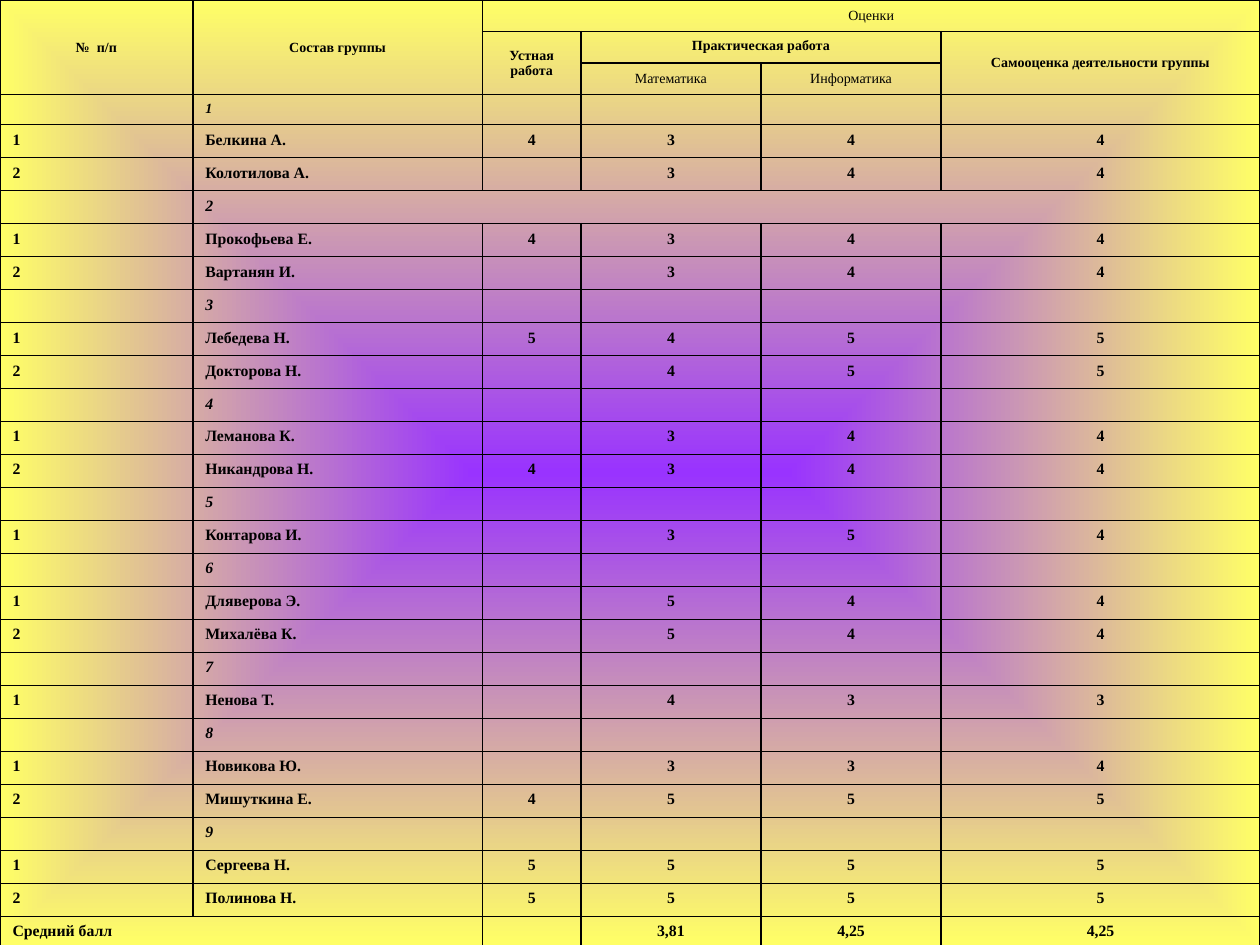
import pptx
import pptx.dml.color
import pptx.enum.text
import pptx.oxml
import pptx.oxml.ns
import pptx.util
from lxml import etree

Inches, Pt = pptx.util.Inches, pptx.util.Pt
ALIGN = pptx.enum.text.PP_ALIGN
ANCHOR = pptx.enum.text.MSO_ANCHOR

COLORS = {"center": "9933FF", "edge": "FFFF66", "ink": "000000"}
FONT = "Times New Roman"
COL_WIDTHS = [1.53, 2.3, 0.78, 1.43, 1.43, 2.53]
HEADER_HEIGHTS = [0.25, 0.25, 0.25, 0.24]  # the last one is the first group's row
TABLE_HEIGHT = 7.54

# row, column, rows spanned, columns spanned, text, bold, anchor
HEADERS = [
    (0, 0, 3, 1, "№  п/п", True, ANCHOR.MIDDLE),
    (0, 1, 3, 1, "Состав группы", True, ANCHOR.MIDDLE),
    (0, 2, 1, 4, "Оценки", False, ANCHOR.MIDDLE),
    (1, 2, 2, 1, "Устная работа", True, ANCHOR.MIDDLE),
    (1, 3, 1, 2, "Практическая работа", True, ANCHOR.TOP),
    (1, 5, 2, 1, "Самооценка деятельности группы", True, ANCHOR.MIDDLE),
    (2, 3, 1, 1, "Математика", False, ANCHOR.MIDDLE),
    (2, 4, 1, 1, "Информатика", False, ANCHOR.MIDDLE),
]
# Members of each group: name, oral work, mathematics, informatics, self-assessment
GROUPS = [
    [("Белкина А.", "4", "3", "4", "4"), ("Колотилова А.", "", "3", "4", "4")],
    [("Прокофьева Е.", "4", "3", "4", "4"), ("Вартанян И.", "", "3", "4", "4")],
    [("Лебедева Н.", "5", "4", "5", "5"), ("Докторова Н.", "", "4", "5", "5")],
    [("Леманова К.", "", "3", "4", "4"), ("Никандрова Н.", "4", "3", "4", "4")],
    [("Контарова И.", "", "3", "5", "4")],
    [("Дляверова Э.", "", "5", "4", "4"), ("Михалёва К.", "", "5", "4", "4")],
    [("Ненова Т.", "", "4", "3", "3")],
    [("Новикова Ю.", "", "3", "3", "4"), ("Мишуткина Е.", "4", "5", "5", "5")],
    [("Сергеева Н.", "5", "5", "5", "5"), ("Полинова Н.", "5", "5", "5", "5")],
]
MERGED_GROUP = 2
AVERAGES = ["Средний балл", "", "", "3,81", "4,25", "4,25"]


def rgb(name):
    return pptx.dml.color.RGBColor.from_string(COLORS[name])


def paint_background(slide):
    """Gradient that spreads from the middle of the slide to its edges."""
    fill = slide.background.fill
    fill.gradient()
    for stop, name in zip(fill.gradient_stops, ("center", "edge")):
        stop.color.rgb = rgb(name)
    lin = slide._element.find(".//" + pptx.oxml.ns.qn("a:lin"))
    lin.getparent().replace(lin, pptx.oxml.parse_xml(
        f'<a:path {pptx.oxml.ns.nsdecls("a")} path="shape">'
        '<a:fillToRect l="50000" t="50000" r="50000" b="50000"/></a:path>'))


def style_cell(cell):
    """Thin border on all sides, no fill, and a small size for an empty cell."""
    tc_pr = cell._tc.get_or_add_tcPr()
    for side in "LRTB":
        tc_pr.append(pptx.oxml.parse_xml(
            f'<a:ln{side} {pptx.oxml.ns.nsdecls("a")} w="{Pt(1)}"><a:solidFill>'
            f'<a:srgbClr val="{COLORS["ink"]}"/></a:solidFill></a:ln{side}>'))
    cell.fill.background()
    p = cell.text_frame.paragraphs[0]
    etree.SubElement(p._p, pptx.oxml.ns.qn("a:endParaRPr"), sz="800")


def write(cell, text, size=9, bold=True, italic=False, align=ALIGN.LEFT, anchor=ANCHOR.TOP):
    if not text:
        return
    cell.vertical_anchor = anchor
    p = cell.text_frame.paragraphs[0]
    p.alignment = align
    r = p.add_run()
    r.text = text
    r.font.name, r.font.size = FONT, Pt(size)
    r.font.bold, r.font.italic = bold, italic
    r.font.color.rgb = rgb("ink")


def write_row(table, row, values):
    for col, text in enumerate(values):
        write(table.cell(row, col), text, align=ALIGN.CENTER if col > 1 else ALIGN.LEFT)


def main():
    prs = pptx.Presentation()
    prs.slide_width, prs.slide_height = Inches(10), Inches(7.5)
    s = prs.slides.add_slide(prs.slide_layouts[6])
    paint_background(s)

    n_rows = 3 + sum(1 + len(group) for group in GROUPS) + 1
    table = s.shapes.add_table(n_rows, len(COL_WIDTHS), 0, 0,
                               Inches(10), Inches(TABLE_HEIGHT)).table
    table.first_row = table.horz_banding = False
    for column, width in zip(table.columns, COL_WIDTHS):
        column.width = Inches(width)
    n_body = n_rows - len(HEADER_HEIGHTS)
    body_height = (TABLE_HEIGHT - sum(HEADER_HEIGHTS)) / n_body
    for row, height in zip(table.rows, HEADER_HEIGHTS + [body_height] * n_body):
        row.height = Inches(height)
    for cell in table.iter_cells():
        style_cell(cell)

    for row, col, n_down, n_across, text, bold, anchor in HEADERS:
        cell = table.cell(row, col)
        if n_down * n_across > 1:
            cell.merge(table.cell(row + n_down - 1, col + n_across - 1))
        write(cell, text, size=8, bold=bold, align=ALIGN.CENTER, anchor=anchor)

    row = 3
    for number, group in enumerate(GROUPS, 1):
        if number == MERGED_GROUP:
            table.cell(row, 1).merge(table.cell(row, 5))
        write(table.cell(row, 1), str(number), size=8 if number == 1 else 9, italic=True)
        for place, member in enumerate(group, 1):
            write_row(table, row + place, [str(place), *member])
        row += 1 + len(group)

    table.cell(row, 0).merge(table.cell(row, 1))
    write_row(table, row, AVERAGES)
    prs.save("out.pptx")


if __name__ == "__main__":
    main()
